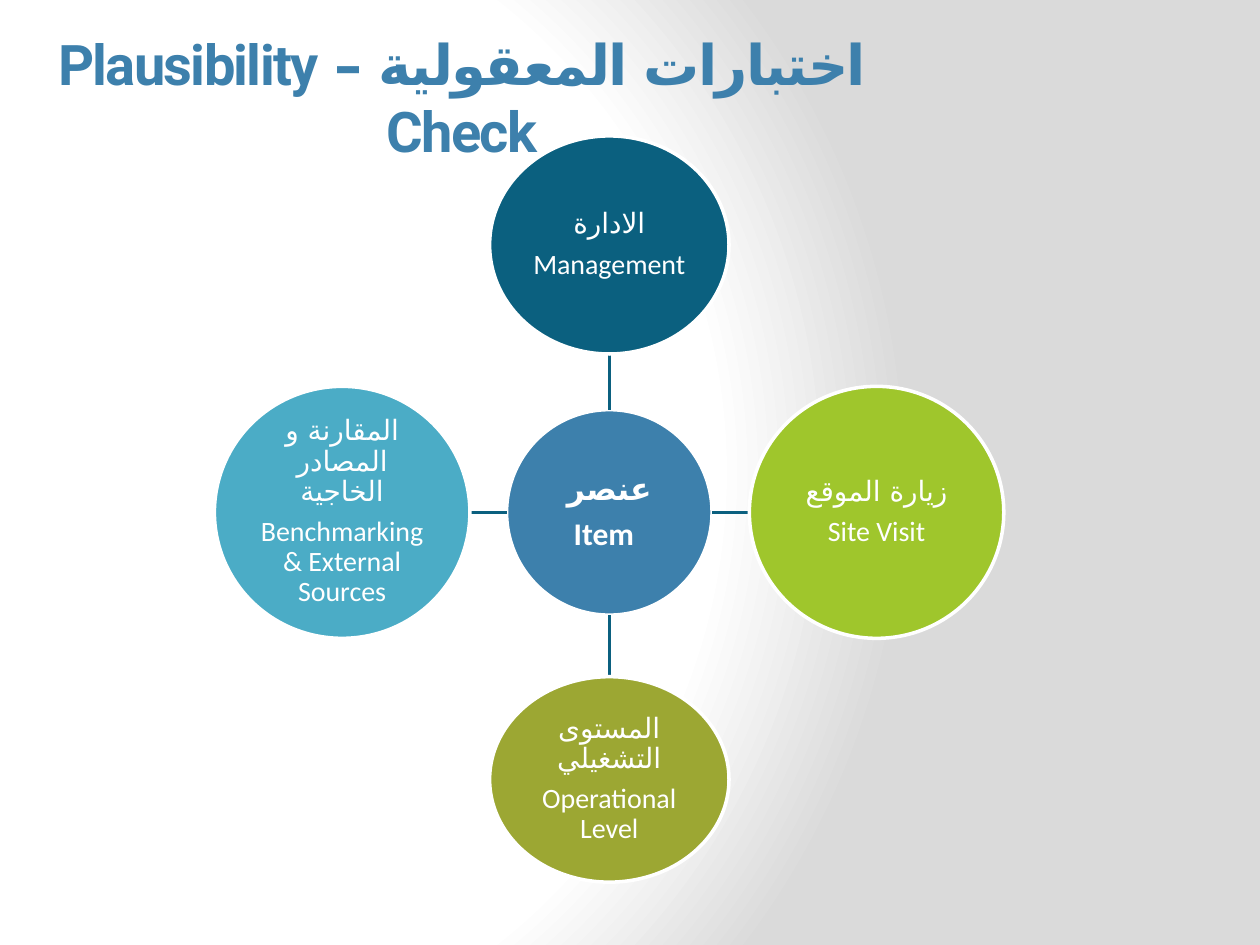
from dataclasses import dataclass

from pptx import Presentation
from pptx.dml.color import RGBColor
from pptx.enum.shapes import MSO_CONNECTOR, MSO_SHAPE
from pptx.enum.text import MSO_ANCHOR, PP_ALIGN
from pptx.oxml import parse_xml
from pptx.oxml.ns import nsdecls, qn
from pptx.util import Pt

OVAL = MSO_SHAPE.OVAL
STRAIGHT = MSO_CONNECTOR.STRAIGHT
CENTER = PP_ALIGN.CENTER
MIDDLE = MSO_ANCHOR.MIDDLE

WHITE = RGBColor(0xFF, 0xFF, 0xFF)
BLUE = RGBColor(0x3D, 0x80, 0xAC)
PETROL = RGBColor(0x0B, 0x60, 0x7F)
GREEN = RGBColor(0x9F, 0xC6, 0x2C)
OLIVE = RGBColor(0x9C, 0xA7, 0x33)
AQUA = RGBColor(0x4B, 0xAC, 0xC6)

ARABIC_FONT = "DejaVu Sans"

# Middle of the hub, in points
HUB_X, HUB_Y = 348.2, 292.8


@dataclass
class Circle:
    """An oval whose middle lies at (dx, dy) from the middle of the hub."""
    arabic: str
    english: str
    dx: float
    dy: float
    width: float
    height: float
    color: RGBColor
    size: float = 16
    bold: bool = False
    right_to_left: bool = False


HUB = Circle("عنصر", " Item", 0, 0, 117.4, 117.4, BLUE, 18, True, True)
SATELLITES = [
    Circle("الادارة", "Management", 0, -152.8, 136.8, 124.6, PETROL, right_to_left=True),
    Circle("زيارة الموقع", "Site Visit", 152.7, 0, 145.4, 144, GREEN),
    Circle("المستوى التشغيلي", "Operational Level", 0, 152.6, 136.8, 117.4, OLIVE),
    Circle("المقارنة و المصادر الخاجية", "Benchmarking & External Sources",
           -152.7, 0, 146, 144, AQUA),
]


def format_paragraph(paragraph, font_name: str, size: float, color: RGBColor,
                     bold: bool, right_to_left: bool) -> None:
    paragraph.alignment = CENTER
    if right_to_left:
        paragraph._p.get_or_add_pPr().set("rtl", "1")
    for run in paragraph.runs:
        run.font.size = Pt(size)
        run.font.bold = bold
        run.font.color.rgb = color
        run.font.name = font_name
        # Arabic letters take the complex-script font
        run._r.get_or_add_rPr().append(
            parse_xml(f'<a:cs {nsdecls("a")} typeface="{ARABIC_FONT}"/>'))


def set_background(slide) -> None:
    slide.background.fill.gradient()
    gradient = slide.element.find(".//" + qn("a:gradFill"))
    stops = "".join(
        f'<a:gs pos="{position}"><a:srgbClr val="{color}"/></a:gs>'
        for position, color in ((0, "FFFFFF"), (75000, "FFFFFF"), (100000, "DADADA")))
    gradient.getparent().replace(gradient, parse_xml(
        f'<a:gradFill {nsdecls("a")} rotWithShape="1"><a:gsLst>{stops}</a:gsLst>'
        '<a:path path="circle"><a:fillToRect l="20000" t="50000" r="100000" b="50000"/>'
        '</a:path></a:gradFill>'))


def add_title(slide, text: str) -> None:
    shape = slide.shapes.add_textbox(Pt(24), Pt(12), Pt(480), Pt(86.4))
    text_frame = shape.text_frame
    text_frame.word_wrap = True
    text_frame.vertical_anchor = MIDDLE
    text_frame.text = text
    paragraph = text_frame.paragraphs[0]
    format_paragraph(paragraph, "Roboto", 32, BLUE, True, True)
    paragraph.runs[0]._r.get_or_add_rPr().set("spc", "-100")


def add_circle(slide, circle: Circle) -> None:
    shape = slide.shapes.add_shape(
        OVAL, Pt(HUB_X + circle.dx - circle.width / 2),
        Pt(HUB_Y + circle.dy - circle.height / 2), Pt(circle.width), Pt(circle.height))
    shape.shadow.inherit = False
    shape.fill.solid()
    shape.fill.fore_color.rgb = circle.color
    shape.line.color.rgb = WHITE
    shape.line.width = Pt(2)
    text_frame = shape.text_frame
    text_frame.word_wrap = True
    text_frame.vertical_anchor = MIDDLE
    text_frame.margin_left = text_frame.margin_right = Pt(0.8)
    text_frame.margin_top = text_frame.margin_bottom = Pt(0.8)
    text_frame.text = f"{circle.arabic}\n{circle.english}"
    for paragraph in text_frame.paragraphs:
        paragraph.line_spacing = 0.9
        paragraph.space_after = Pt(0.35 * circle.size)
        format_paragraph(paragraph, "Calibri", circle.size, WHITE,
                         circle.bold, circle.right_to_left)


def add_spoke(slide, circle: Circle) -> None:
    """Draw the line from the edge of the hub to the edge of the circle."""
    sign_x = (circle.dx > 0) - (circle.dx < 0)
    sign_y = (circle.dy > 0) - (circle.dy < 0)
    connector = slide.shapes.add_connector(
        STRAIGHT,
        Pt(HUB_X + sign_x * HUB.width / 2), Pt(HUB_Y + sign_y * HUB.height / 2),
        Pt(HUB_X + circle.dx - sign_x * circle.width / 2),
        Pt(HUB_Y + circle.dy - sign_y * circle.height / 2))
    connector.line.color.rgb = PETROL
    connector.line.width = Pt(2)
    connector._element.spPr.append(parse_xml(f'<a:effectLst {nsdecls("a")}/>'))


def main() -> None:
    presentation = Presentation()
    presentation.slide_width, presentation.slide_height = Pt(720), Pt(540)
    slide = presentation.slides.add_slide(presentation.slide_layouts[6])

    # Background and title
    set_background(slide)
    add_title(slide, "اختبارات المعقولية – Plausibility Check")

    # Hub with its satellites
    add_circle(slide, HUB)
    for satellite in SATELLITES:
        add_spoke(slide, satellite)
        add_circle(slide, satellite)

    presentation.save("out.pptx")


if __name__ == "__main__":
    main()
